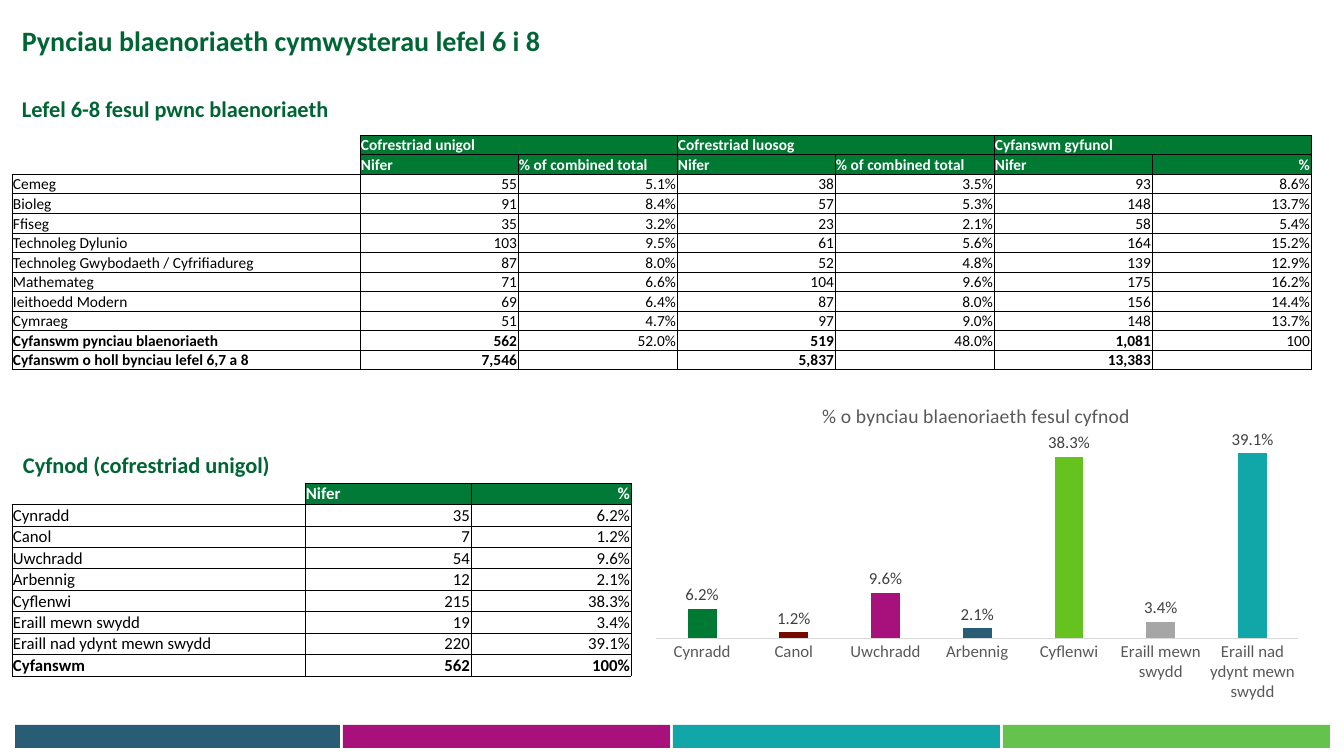
import pptx
import pptx.chart.data
import pptx.dml.color
import pptx.enum.chart
import pptx.enum.text
import pptx.oxml
import pptx.util
from lxml import etree

FONT = "Calibri"
DRAWING = 'xmlns:a="http://schemas.openxmlformats.org/drawingml/2006/main"'
CHART = 'xmlns:c="http://schemas.openxmlformats.org/drawingml/2006/chart"'


def px(length):
    return pptx.util.Emu(round(length * 914400 / 100.8))


def style(font, size, color, bold=False):
    font.name = FONT
    font.size = pptx.util.Pt(size)
    font.bold = bold
    font.color.rgb = pptx.dml.color.RGBColor.from_string(color)


presentation = pptx.Presentation()
presentation.slide_width = px(1344)
presentation.slide_height = px(756)
slide = presentation.slides.add_slide(presentation.slide_layouts[6])

# Footer bars
for left, width, color in [(343, 327, "A8117C"), (673, 327, "11A6A8"),
                           (1003, 327, "65C24C"), (15, 325, "295D75")]:
    bar = slide.shapes.add_shape(1, px(left), px(725), px(width), px(23))
    bar.shadow.inherit = False
    bar.fill.solid()
    bar.fill.fore_color.rgb = pptx.dml.color.RGBColor.from_string(color)
    bar.line.fill.background()

# Headings
for text, left, top, width, height, size, spacing in [
    ("Pynciau blaenoriaeth cymwysterau lefel 6 i 8", 12, 22, 718, 75, 20, 0.9),
    ("Lefel 6-8 fesul pwnc blaenoriaeth", 12, 90, 422, 37, 16, 1),
    ("Cyfnod (cofrestriad unigol)", 13, 446, 346, 37, 16, 1),
]:
    heading = slide.shapes.add_textbox(px(left), px(top), px(width), px(height))
    heading.text_frame.word_wrap = True
    heading.text_frame.text = text
    paragraph = heading.text_frame.paragraphs[0]
    paragraph.line_spacing = spacing
    style(paragraph.runs[0].font, size, "006534", True)

# Table contents
subject_rows = [
    ["", "Cofrestriad unigol", "", "Cofrestriad luosog", "", "Cyfanswm gyfunol", ""],
    ["", "Nifer", "% of combined total", "Nifer", "% of combined total", "Nifer", "%"],
    ["Cemeg", "55", "5.1%", "38", "3.5%", "93", "8.6%"],
    ["Bioleg", "91", "8.4%", "57", "5.3%", "148", "13.7%"],
    ["Ffiseg", "35", "3.2%", "23", "2.1%", "58", "5.4%"],
    ["Technoleg Dylunio", "103", "9.5%", "61", "5.6%", "164", "15.2%"],
    ["Technoleg Gwybodaeth / Cyfrifiadureg", "87", "8.0%", "52", "4.8%", "139", "12.9%"],
    ["Mathemateg", "71", "6.6%", "104", "9.6%", "175", "16.2%"],
    ["Ieithoedd Modern", "69", "6.4%", "87", "8.0%", "156", "14.4%"],
    ["Cymraeg", "51", "4.7%", "97", "9.0%", "148", "13.7%"],
    ["Cyfanswm pynciau blaenoriaeth", "562", "52.0%", "519", "48.0%", "1,081", "100"],
    ["Cyfanswm o holl bynciau lefel 6,7 a 8", "7,546", "", "5,837", "", "13,383", ""],
]
phases = [
    ("Cynradd", 35, 0.062, "007A33"),
    ("Canol", 7, 0.012, "750A00"),
    ("Uwchradd", 54, 0.096, "A8117C"),
    ("Arbennig", 12, 0.021, "295D75"),
    ("Cyflenwi", 215, 0.383, "65C21F"),
    ("Eraill mewn swydd", 19, 0.034, "A6A6A6"),
    ("Eraill nad ydynt mewn swydd", 220, 0.391, "11A6A8"),
]
phase_rows = [["", "Nifer", "%"]]
phase_rows += [[name, str(count), f"{share:.1%}"] for name, count, share, color in phases]
phase_rows += [["Cyfanswm", "562", "100%"]]

# Tables
for rows, header_count, top, height, widths, size, green, bold_columns in [
    (phase_rows, 1, 483, 193, [293, 166, 160], 12, "017A37", (0, 1, 2)),
    (subject_rows, 2, 135, 235, [348] + [158, 159] * 3, 11, "007A33", (0, 1, 3, 5)),
]:
    table = slide.shapes.add_table(len(rows), len(widths), px(12), px(top),
                                   px(sum(widths)), px(height)).table
    table.first_row = table.horz_banding = False
    # The "No Style, No Grid" table style
    table._tbl.tblPr[0].text = "{2D5ABB26-0587-4C30-8999-92F81FD0307C}"
    for column, width in zip(table.columns, widths):
        column.width = px(width)

    for row, values in enumerate(rows):
        for column, value in enumerate(values):
            cell = table.cell(row, column)
            header = row < header_count
            corner = header and column == 0
            cell.margin_left = cell.margin_right = cell.margin_top = px(1)
            cell.margin_bottom = 0
            cell.vertical_anchor = pptx.enum.text.MSO_ANCHOR.BOTTOM
            cell.text = value
            paragraph = cell.text_frame.paragraphs[0]
            if value == "%" or (column and not header):
                paragraph.alignment = pptx.enum.text.PP_ALIGN.RIGHT
            total = values[0].startswith("Cyfanswm") and column in bold_columns
            for run in paragraph.runs:
                style(run.font, size, "FFFFFF" if header else "000000", header or total)
            if not value:
                paragraph._p.append(pptx.oxml.parse_xml(
                    f'<a:endParaRPr {DRAWING} sz="{size * 100}"/>'))

            if header and not corner:
                cell.fill.solid()
                cell.fill.fore_color.rgb = pptx.dml.color.RGBColor.from_string(green)
            else:
                cell.fill.background()

            # Corner cells only border on the cells that hold text
            sides = "LRTB"
            if corner:
                sides = "RB" if row == header_count - 1 else "R"
            for index, side in enumerate("LRTB"):
                paint = "<a:noFill/>"
                if side in sides:
                    paint = '<a:solidFill><a:srgbClr val="000000"/></a:solidFill>'
                cell._tc.get_or_add_tcPr().insert(index, pptx.oxml.parse_xml(
                    f'<a:ln{side} {DRAWING} w="6350">{paint}</a:ln{side}>'))

    if header_count == 2:
        for column in (1, 3, 5):
            table.cell(0, column).merge(table.cell(0, column + 1))

# Chart of phase shares
chart_data = pptx.chart.data.CategoryChartData(number_format="0.0%")
chart_data.categories = [phase[0] for phase in phases]
chart_data.add_series("Series 1", [phase[2] for phase in phases])
chart = slide.shapes.add_chart(
    pptx.enum.chart.XL_CHART_TYPE.COLUMN_CLUSTERED,
    px(636), px(378), px(676), px(338), chart_data).chart
style(chart.font, 10, "000000")
chart.has_legend = False
chart.has_title = True
chart.chart_title.include_in_layout = False
chart.chart_title.text_frame.text = "% o bynciau blaenoriaeth fesul cyfnod"
style(chart.chart_title.text_frame.paragraphs[0].runs[0].font, 14, "595959")

category_axis = chart.category_axis
category_axis.major_tick_mark = pptx.enum.chart.XL_TICK_MARK.NONE
style(category_axis.tick_labels.font, 12, "595959")
category_axis.format.line.width = pptx.util.Pt(0.75)
category_axis.format.line.color.rgb = pptx.dml.color.RGBColor.from_string("D9D9D9")
value_axis = chart.value_axis
value_axis.visible = False
value_axis.has_major_gridlines = False
value_axis.minimum_scale = 0
value_axis.maximum_scale = 0.45

plot = chart.plots[0]
plot.vary_by_categories = False
plot.gap_width = 219
plot.overlap = -27
plot.has_data_labels = True
labels = plot.data_labels
labels.show_value = True
labels.number_format = "0.0%"
labels.number_format_is_linked = False
labels.position = pptx.enum.chart.XL_LABEL_POSITION.OUTSIDE_END
style(labels.font, 12, "404040")
for index, phase in enumerate(phases):
    fill = plot.series[0].points[index].format.fill
    fill.solid()
    fill.fore_color.rgb = pptx.dml.color.RGBColor.from_string(phase[3])

# Fixed places of the title and the plot area
title_element = chart.chart_title._element
plot_element = chart._chartSpace.chart.plotArea
for element, position, target, places in [
    (title_element, 1, "", {"x": 0.27, "y": 0.06}),
    (plot_element, 0, '<c:layoutTarget val="inner"/>',
     {"x": 0.03, "y": 0.14, "w": 0.95, "h": 0.63}),
]:
    for layout in element.findall("{*}layout"):
        element.remove(layout)
    modes = "".join(f'<c:{name}Mode val="edge"/>' for name in "xy")
    values = "".join(f'<c:{name} val="{value}"/>' for name, value in places.items())
    element.insert(position, etree.fromstring(
        f"<c:layout {CHART}><c:manualLayout>{target}{modes}{values}"
        "</c:manualLayout></c:layout>"))

presentation.save("out.pptx")
